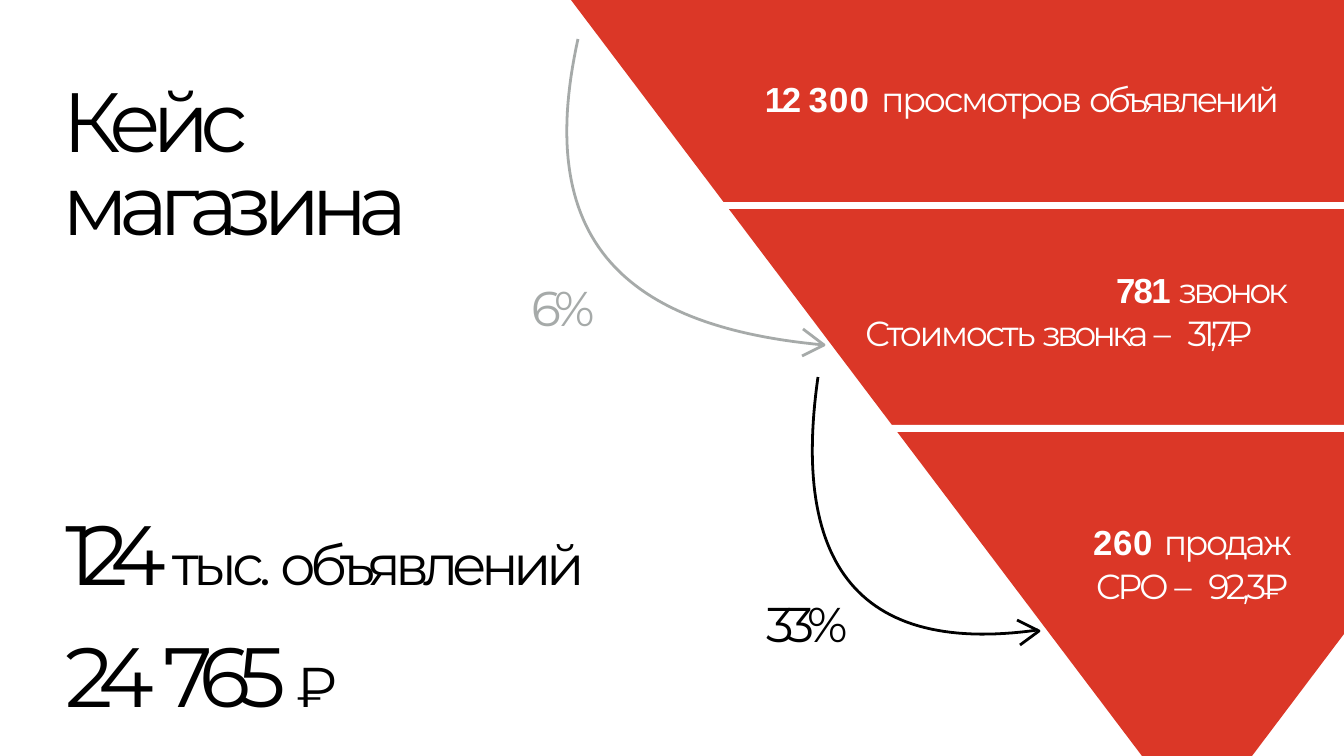
from pptx import Presentation
from pptx.dml.color import RGBColor
from pptx.enum.shapes import MSO_SHAPE
from pptx.enum.text import MSO_AUTO_SIZE
from pptx.util import Pt

PX = 14966  # EMU per px
W, H = 1344, 756
RED = RGBColor(0xDB, 0x37, 0x27)
GRAY = RGBColor(0xA6, 0xAA, 0xA9)
BLACK = RGBColor(0, 0, 0)
WHITE = RGBColor(255, 255, 255)
SANS, MAIN = "Arial", "Montserrat"

prs = Presentation()
prs.slide_width, prs.slide_height = W * PX, H * PX
s = prs.slides.add_slide(prs.slide_layouts[6])


def add_outline(points, fill=None, line=None):
    pts = [(round(x * PX), round(y * PX)) for x, y in points]
    fb = s.shapes.build_freeform(*pts[0], scale=1.0)
    fb.add_line_segments(pts[1:], close=fill is not None)
    sp = fb.convert_to_shape()
    sp.shadow.inherit = False
    if fill is not None:
        sp.fill.solid()
        sp.fill.fore_color.rgb = fill
        sp.line.fill.background()
    else:
        sp.fill.background()
        sp.line.color.rgb = line
        sp.line.width = Pt(3.3)


def add_text(*paragraphs, at, size, color, inset=1, leading=None,
             before=0, first=0, indent=0):
    """Each run is (text, letter spacing in pt[, size[, font]])."""
    tf = s.shapes.add_textbox(*[v * PX for v in at]).text_frame
    tf.word_wrap = True
    tf.auto_size = MSO_AUTO_SIZE.SHAPE_TO_FIT_TEXT
    tf.margin_left, tf.margin_top = PX, inset * PX
    tf.margin_right = tf.margin_bottom = 0
    for i, runs in enumerate(paragraphs):
        p = tf.add_paragraph() if i else tf.paragraphs[0]
        pPr = p._p.get_or_add_pPr()
        pPr.set("marL", str(indent * PX if i else 0))
        pPr.set("indent", str(first * PX))
        if leading:
            p.line_spacing = Pt(leading)
        if i:
            p.space_before = Pt(before)
        for text, spacing, *extra in runs:
            r = p.add_run()
            r.text = text
            r.font.size = Pt(extra[0] if extra else size)
            r.font.name = extra[1] if len(extra) > 1 else MAIN
            r.font.bold = r.font.name == SANS
            r.font.color.rgb = color
            r._r.get_or_add_rPr().set("spc", str(round(spacing * 100)))


# Conversion arrows: cubic curve and arrowhead
arrows = [
    (GRAY, [(578, 39), (535, 234), (616, 326), (824, 345)],
     [(803, 329), (824, 345), (802, 356)]),
    (BLACK, [(818, 377), (791, 566), (860, 655), (1038, 630)],
     [(1017, 620), (1039, 631), (1020, 645)]),
]
STEPS = 60
for color, (a, b, c, d), head in arrows:
    curve = []
    for i in range(STEPS + 1):
        t = i / STEPS
        u = 1 - t
        curve.append([u**3 * a[k] + 3 * u * u * t * b[k]
                      + 3 * u * t * t * c[k] + t**3 * d[k] for k in (0, 1)])
    add_outline(curve, line=color)
    add_outline(head, line=color)

# Funnel with white dividers
add_outline([(W, 0), (571, 0), (1142, H), (1252, H), (W, 634)], fill=RED)
for x, y in [(721, 202), (890, 425)]:
    sp = s.shapes.add_shape(MSO_SHAPE.RECTANGLE, x * PX, y * PX, (W - x) * PX, 7 * PX)
    sp.shadow.inherit = False
    sp.fill.solid()
    sp.fill.fore_color.rgb = WHITE
    sp.line.fill.background()

# Conversion rates
add_text([("6%", -6.5)], at=(530, 277, 72, 60), size=57.5, color=GRAY)
add_text([("33%", -7.8)], at=(765, 593, 96, 60), size=57.5, color=BLACK)

# Funnel stages
add_text([("12 ", -2.8, 41, SANS), ("300 ", 1.4, 41, SANS),
          ("просмотров ", -2.7), ("объявлений", -4.2)],
         at=(764, 77, 538, 44), size=41, color=WHITE)
add_text([("781 ", -2, 41, SANS), ("звонок ", -4.3), ("Стоимость ", -3),
          ("звонка ", -4.6), ("– ", 4.3), ("31,7₽", -5.8)],
         at=(864, 266, 433, 87), size=41, color=WHITE, leading=51.1, first=251)
add_text([("260 ", 0.9, 41, SANS), ("продаж", -3.1)],
         [("CPO ", -3.9), ("– ", 4.3), ("92,3₽", -4.2)],
         at=(1092, 520, 204, 87), size=41, color=WHITE, before=1.9, indent=3)

# Title and totals
add_text([("Кейс ", -11.2), ("магазина", -11.3)],
         at=(62, 67, 383, 186), size=99, color=BLACK, inset=18, leading=98.9)
add_text([("124 ", -18.6), ("тыс. ", -6.3, 66), ("объявлений", -6.9, 66)],
         [("24 ", -15.2), ("765 ", -13.9), ("₽", -7, 66)],
         at=(65, 481, 599, 244), size=99, color=BLACK, inset=21, before=24.1)

prs.save("out.pptx")
